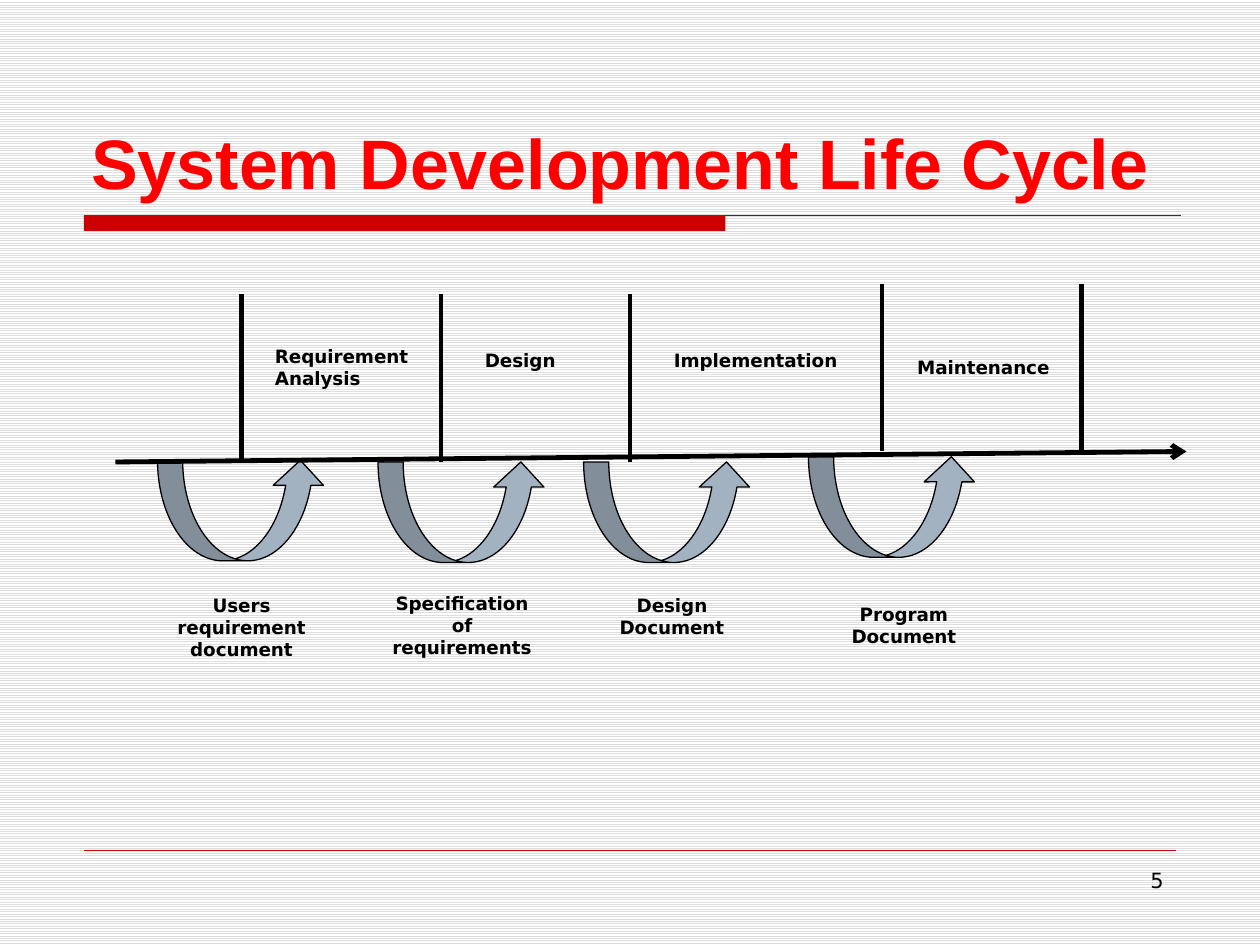
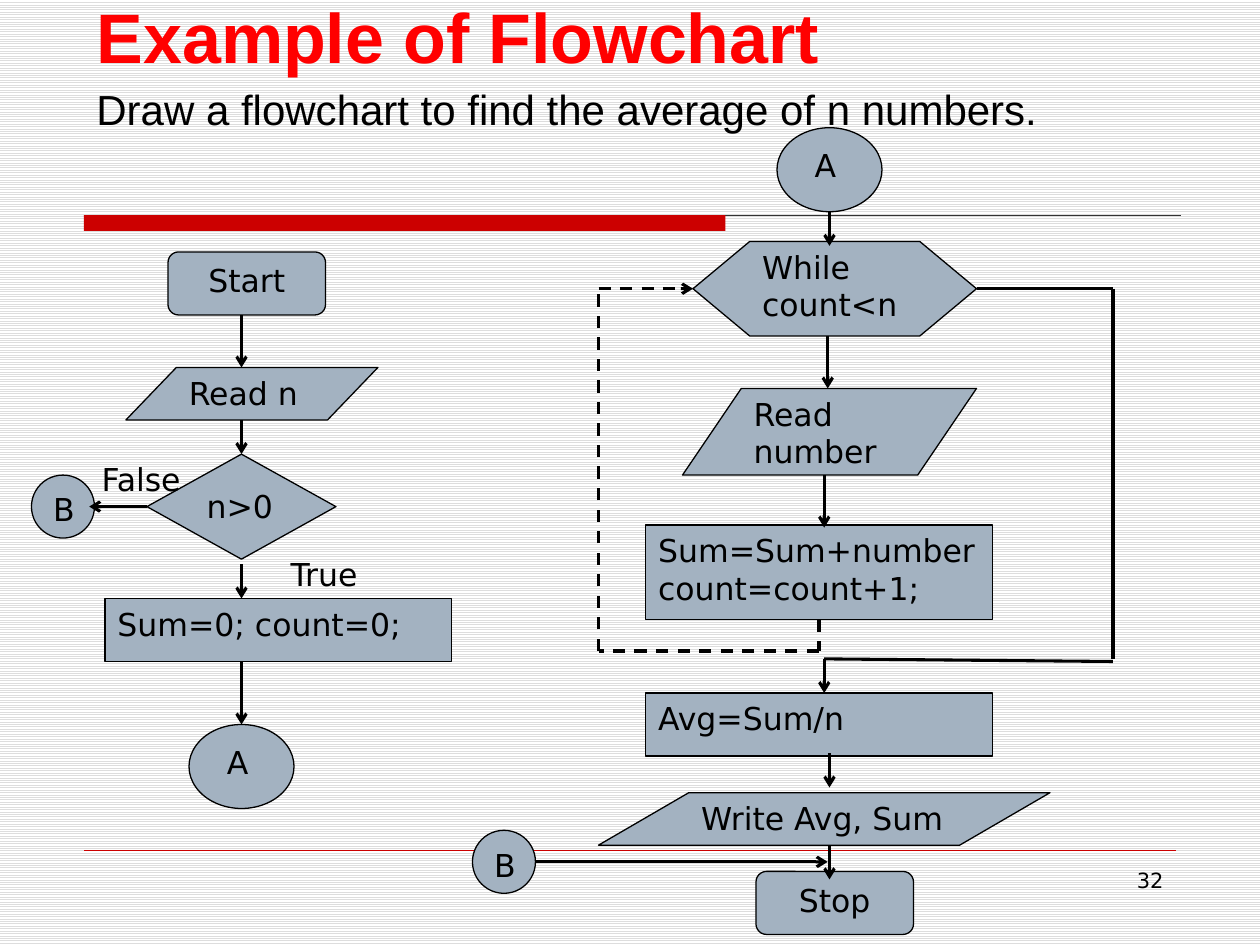
from lxml.etree import SubElement
from pptx import Presentation
from pptx.dml.color import RGBColor
from pptx.enum.dml import MSO_LINE, MSO_PATTERN
from pptx.enum.shapes import MSO_CONNECTOR, MSO_SHAPE
from pptx.enum.text import MSO_ANCHOR, MSO_AUTO_SIZE, PP_ALIGN
from pptx.oxml.ns import qn
from pptx.util import Pt

hue = RGBColor.from_string
RED, BAND, STEEL, INK = "FF0000", "CC0000", "A3B2C1", "000000"
LEFT, MID, RIGHT = PP_ALIGN.LEFT, PP_ALIGN.CENTER, PP_ALIGN.RIGHT


def wire(slide, x1, y1, x2, y2, width=1.75, color=INK, head=False, dash=False):
    link = slide.shapes.add_connector(
        MSO_CONNECTOR.STRAIGHT, Pt(x1), Pt(y1), Pt(x2), Pt(y2))
    link.line.color.rgb = hue(color)
    link.line.width = Pt(width)
    if dash:
        link.line.dash_style = MSO_LINE.DASH
    props = link.element.spPr
    if head:
        SubElement(props.find(qn("a:ln")), qn("a:tailEnd"), type="arrow")
    SubElement(props, qn("a:effectLst"))


def box(slide, x, y, w, h, text="", kind=None, size=18, bold=False,
        align=LEFT, font="DejaVu Sans"):
    place = Pt(x), Pt(y), Pt(w), Pt(h)
    if kind is None:
        item = slide.shapes.add_textbox(*place)
    else:
        item = slide.shapes.add_shape(kind, *place)
        item.shadow.inherit = False
        item.fill.solid()
        item.fill.fore_color.rgb = hue(STEEL)
        item.line.color.rgb = hue(INK)
        item.line.width = Pt(0.75)
    frame = item.text_frame
    frame.word_wrap = True
    frame.vertical_anchor = MSO_ANCHOR.TOP
    para = frame.paragraphs[0]
    para.alignment = align
    for i, part in enumerate(text.split("\n") if text else []):
        if i:
            para.add_line_break()
        run = para.add_run()
        run.text = part
        run.font.name = font
        run.font.size = Pt(size)
        run.font.bold = bold
        run.font.color.rgb = hue(INK)


deck = Presentation()
deck.slide_width, deck.slide_height = Pt(720), Pt(540)
layout = deck.slide_layouts[5]
paper = layout.background.fill
paper.patterned()
paper.pattern = MSO_PATTERN.LIGHT_HORIZONTAL
paper.fore_color.rgb = hue("DDDDDD")
paper.back_color.rgb = hue("FFFFFF")

pages = [
    ("System Development Life Cycle", 45, 24, 96, "5"),
    ("Example of Flowchart", 48, -6, 54, "32"),
]
for name, x, y, h, number in pages:
    slide = deck.slides.add_slide(layout)
    wire(slide, 48, 123, 675, 123, 0.75, "333333")
    band = slide.shapes.add_shape(
        MSO_SHAPE.RECTANGLE, Pt(48), Pt(123), Pt(366.5), Pt(9))
    band.shadow.inherit = False
    band.fill.solid()
    band.fill.fore_color.rgb = hue(BAND)
    band.line.fill.background()
    wire(slide, 48, 486, 672, 486, 0.25, BAND)
    box(slide, 516, 492, 156, 37.5, number, size=12, align=RIGHT)
    title = slide.shapes.title
    title.left, title.top, title.width, title.height = Pt(x), Pt(y), Pt(630), Pt(h)
    frame = title.text_frame
    frame.auto_size = MSO_AUTO_SIZE.NONE
    frame.word_wrap = True
    frame.vertical_anchor = MSO_ANCHOR.BOTTOM
    para = frame.paragraphs[0]
    para.alignment = LEFT
    run = para.add_run()
    run.text = name
    run.font.name = "Arial"
    run.font.size = Pt(40)
    run.font.bold = True
    run.font.color.rgb = hue(RED)

cycle, flow = deck.slides

for x, y in [(138, 168), (252, 168), (360, 168), (504, 162), (618, 162)]:
    wire(cycle, x, y, x, y + 96, 2.75)

phases = [
    ("Requirement Analysis", 150, 193.5, 96),
    ("Design", 270, 196, 66),
    ("Implementation", 378, 196, 114),
    ("Maintenance", 517, 200, 96),
]
for text, x, y, w in phases:
    box(cycle, x, y, w, 32, text, size=10.5, bold=True)

for x, y in [(90, 263), (216, 264), (333.5, 264), (462, 261)]:
    box(cycle, x, y, 96, 57.5, kind=MSO_SHAPE.CURVED_UP_ARROW)

papers = [
    ("Users requirement document", 90, 336),
    ("Specification of requirements", 216, 335),
    ("Design Document", 336, 336),
    ("Program Document", 468.5, 341),
]
for text, x, y in papers:
    box(cycle, x, y, 96, 45, text, size=10.5, bold=True, align=MID)

wire(cycle, 66, 264, 678, 258, 2.75, head=True)

box(flow, 48, 44, 630, 40, "Draw a flowchart to find the average of n numbers.",
    size=24, font="Arial")

END = MSO_SHAPE.FLOWCHART_ALTERNATE_PROCESS
DATA = MSO_SHAPE.FLOWCHART_DATA
TEST = MSO_SHAPE.FLOWCHART_DECISION
STEP = MSO_SHAPE.FLOWCHART_PROCESS
LOOP = MSO_SHAPE.FLOWCHART_PREPARATION
JOIN = MSO_SHAPE.FLOWCHART_CONNECTOR

nodes = [
    ("Start", END, 96, 144, 90, 36),
    ("Read n", DATA, 72, 210, 144, 30),
    ("n>0", TEST, 84, 259.5, 108, 60),
    ("Sum=0; count=0;", STEP, 60, 342, 198, 36),
    (" A", JOIN, 108, 414, 60, 48),
    ("True", None, 159, 313.5, 57, 29),
    ("False", None, 51, 259.5, 66, 29),
    ("B", JOIN, 18, 271.5, 36, 36),
    ("While count<n", LOOP, 396, 138, 162, 54),
    ("Read number", DATA, 390, 222, 168, 49.5),
    ("Sum=Sum+number\ncount=count+1;", STEP, 369, 300, 198, 54),
    ("Avg=Sum/n", STEP, 369, 396, 198, 36),
    ("Write Avg, Sum", DATA, 342, 453, 258, 30),
    ("Stop", END, 432, 498, 90, 36),
    (" A", JOIN, 444, 73, 60, 48),
    ("B", JOIN, 270, 474.5, 36, 36),
]
for text, kind, x, y, w, h in nodes:
    box(flow, x, y, w, h, text, kind, align=MID if kind == END else LEFT)

drops = [
    (138, 180, 210), (138, 240, 259.5), (138, 322.5, 342), (138, 378, 414),
    (474, 121, 140.5), (473, 192, 222), (471, 271.5, 301.5),
    (474, 430.5, 450), (471, 376.5, 396), (474, 483, 502.5),
]
for x, top, foot in drops:
    wire(flow, x, top, x, foot, head=True)
wire(flow, 84, 289.5, 51, 289.5, head=True)
wire(flow, 306, 492.5, 473, 492.5, head=True)

for ends in [(558, 165, 636, 165), (636, 165, 636, 376.5), (636, 378, 471, 376.5)]:
    wire(flow, *ends)

turns = [(468, 354), (468, 372), (342, 372), (342, 165), (396, 165)]
for start, stop in zip(turns, turns[1:]):
    wire(flow, *start, *stop, head=stop == turns[-1], dash=True)

deck.save("out.pptx")
